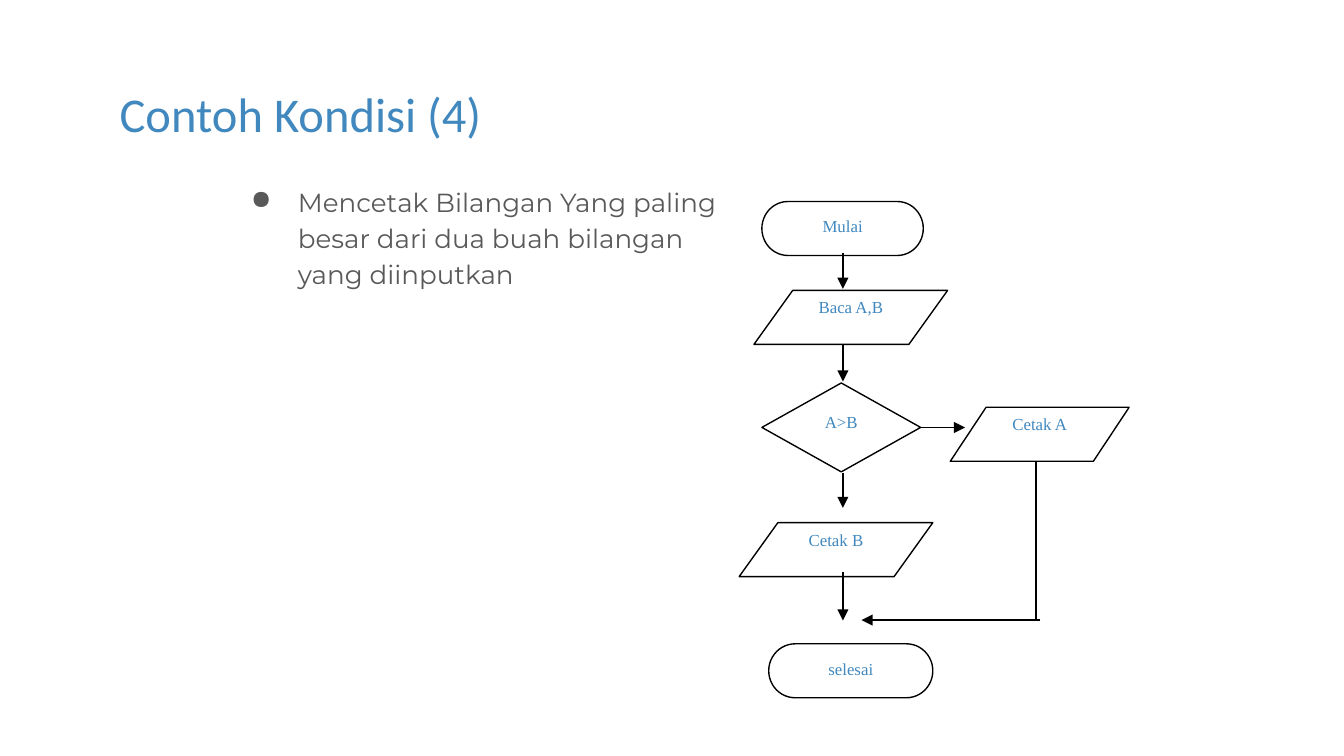
from lxml import etree
from pptx import Presentation
from pptx.dml.color import RGBColor
from pptx.enum.shapes import MSO_CONNECTOR, MSO_SHAPE
from pptx.enum.text import MSO_ANCHOR, MSO_AUTO_SIZE, PP_ALIGN
from pptx.oxml.ns import qn
from pptx.util import Cm, Pt

STRAIGHT = MSO_CONNECTOR.STRAIGHT
TERMINATOR = MSO_SHAPE.FLOWCHART_TERMINATOR
DATA = MSO_SHAPE.FLOWCHART_DATA
DECISION = MSO_SHAPE.FLOWCHART_DECISION
TOP, MIDDLE = MSO_ANCHOR.TOP, MSO_ANCHOR.MIDDLE
LEFT, CENTER = PP_ALIGN.LEFT, PP_ALIGN.CENTER
NO_AUTOFIT = MSO_AUTO_SIZE.NONE

BLUE, GRAY, BLACK, WHITE = "4088BE", "595959", "000000", "FFFFFF"
LINE_WIDTH = Pt(0.75)
STEP_HEIGHT = 1.02
AXIS = 15.93
RETURN_AXIS = 19.58
MERGE_Y = 11.72

STEPS = [
    (TERMINATOR, "Mulai", 14.4, 3.81, 3.05, STEP_HEIGHT),
    (DATA, "Baca A,B", 14.25, 5.49, 3.66, STEP_HEIGHT),
    (DECISION, "A>B", 14.4, 7.24, 3, 1.68),
    (DATA, "Cetak A", 17.96, 7.7, 3.38, STEP_HEIGHT),
    (DATA, "Cetak B", 13.97, 9.88, 3.66, STEP_HEIGHT),
    (TERMINATOR, "selesai", 14.53, 12.17, 3.1, STEP_HEIGHT),
]
FLOWS = [
    (AXIS, 4.78, AXIS, 5.46, True),
    (AXIS, 6.53, AXIS, 7.21, True),
    (AXIS, 8.94, AXIS, 9.6, True),
    (17.38, 8.08, 18.24, 8.08, True),
    (AXIS, 10.82, AXIS, 11.73, True),
    (RETURN_AXIS, 8.71, RETURN_AXIS, MERGE_Y, False),
    (19.66, MERGE_Y, 16.28, MERGE_Y, True),
]


def color(value):
    """Turn a hex string into a colour."""
    return RGBColor.from_string(value)


def place(shape, left, top, width, height):
    """Set the position and size of a shape in centimetres."""
    shape.left, shape.top = Cm(left), Cm(top)
    shape.width, shape.height = Cm(width), Cm(height)


def write(shape, text, font_name, size, font_color, alignment, anchor):
    """Write one formatted paragraph into a shape and return it."""
    frame = shape.text_frame
    frame.text = text
    frame.word_wrap = True
    frame.auto_size = NO_AUTOFIT
    frame.vertical_anchor = anchor
    paragraph = frame.paragraphs[0]
    paragraph.alignment = alignment
    paragraph.font.name = font_name
    paragraph.font.size = Pt(size)
    paragraph.font.color.rgb = color(font_color)
    return paragraph


def set_insets(shape, inset):
    """Give all four sides of a text frame the same inset."""
    frame = shape.text_frame
    frame.margin_left = frame.margin_right = Cm(inset)
    frame.margin_top = frame.margin_bottom = Cm(inset)


def add_bullet(paragraph, character, bullet_color, margin, indent):
    """Give a paragraph a coloured bullet with a hanging indent."""
    properties = paragraph._p.get_or_add_pPr()
    properties.set("marL", str(Cm(margin)))
    properties.set("indent", str(Cm(indent)))
    bullet = etree.SubElement(properties, qn("a:buClr"))
    etree.SubElement(bullet, qn("a:srgbClr"), val=bullet_color)
    etree.SubElement(properties, qn("a:buChar"), char=character)


def add_title(slide, text):
    """Fill and format the title placeholder."""
    title = slide.shapes.title
    place(title, 2.01, 1.47, 21.41, 1.35)
    write(title, text, "Calibri", 26, BLUE, LEFT, MIDDLE)
    set_insets(title, 0.25)


def add_body(slide, text):
    """Add the bulleted problem statement."""
    body = slide.shapes.add_textbox(Cm(4.11), Cm(3.18), Cm(10.16), Cm(9.45))
    paragraph = write(body, text, "Montserrat", 14, GRAY, LEFT, TOP)
    paragraph.line_spacing = 1.15
    set_insets(body, 0.25)
    add_bullet(paragraph, "●", GRAY, 1.27, -0.89)


def add_step(slide, kind, text, left, top, width, height):
    """Add one outlined flowchart step."""
    step = slide.shapes.add_shape(kind, Cm(left), Cm(top), Cm(width), Cm(height))
    step.shadow.inherit = False
    step.fill.solid()
    step.fill.fore_color.rgb = color(WHITE)
    step.line.color.rgb = color(BLACK)
    step.line.width = LINE_WIDTH
    write(step, text, "Times New Roman", 9, BLUE, CENTER, TOP)


def add_flow(slide, start_x, start_y, end_x, end_y, has_arrow):
    """Add a flow line, with an arrowhead at its end if wanted."""
    flow = slide.shapes.add_connector(
        STRAIGHT, Cm(start_x), Cm(start_y), Cm(end_x), Cm(end_y)
    )
    flow.line.color.rgb = color(BLACK)
    flow.line.width = LINE_WIDTH
    if has_arrow:
        etree.SubElement(flow.line._get_or_add_ln(), qn("a:tailEnd"), type="triangle")
    etree.SubElement(flow._element.spPr, qn("a:effectLst"))


def main():
    """Build the slide and save it."""
    presentation = Presentation()
    presentation.slide_width, presentation.slide_height = Cm(25.4), Cm(14.29)
    slide = presentation.slides.add_slide(presentation.slide_layouts[5])
    add_title(slide, "Contoh Kondisi (4)")
    add_body(
        slide,
        "Mencetak Bilangan Yang paling besar dari dua buah bilangan yang diinputkan",
    )
    for step in STEPS:
        add_step(slide, *step)
    for flow in FLOWS:
        add_flow(slide, *flow)
    presentation.save("out.pptx")


if __name__ == "__main__":
    main()
